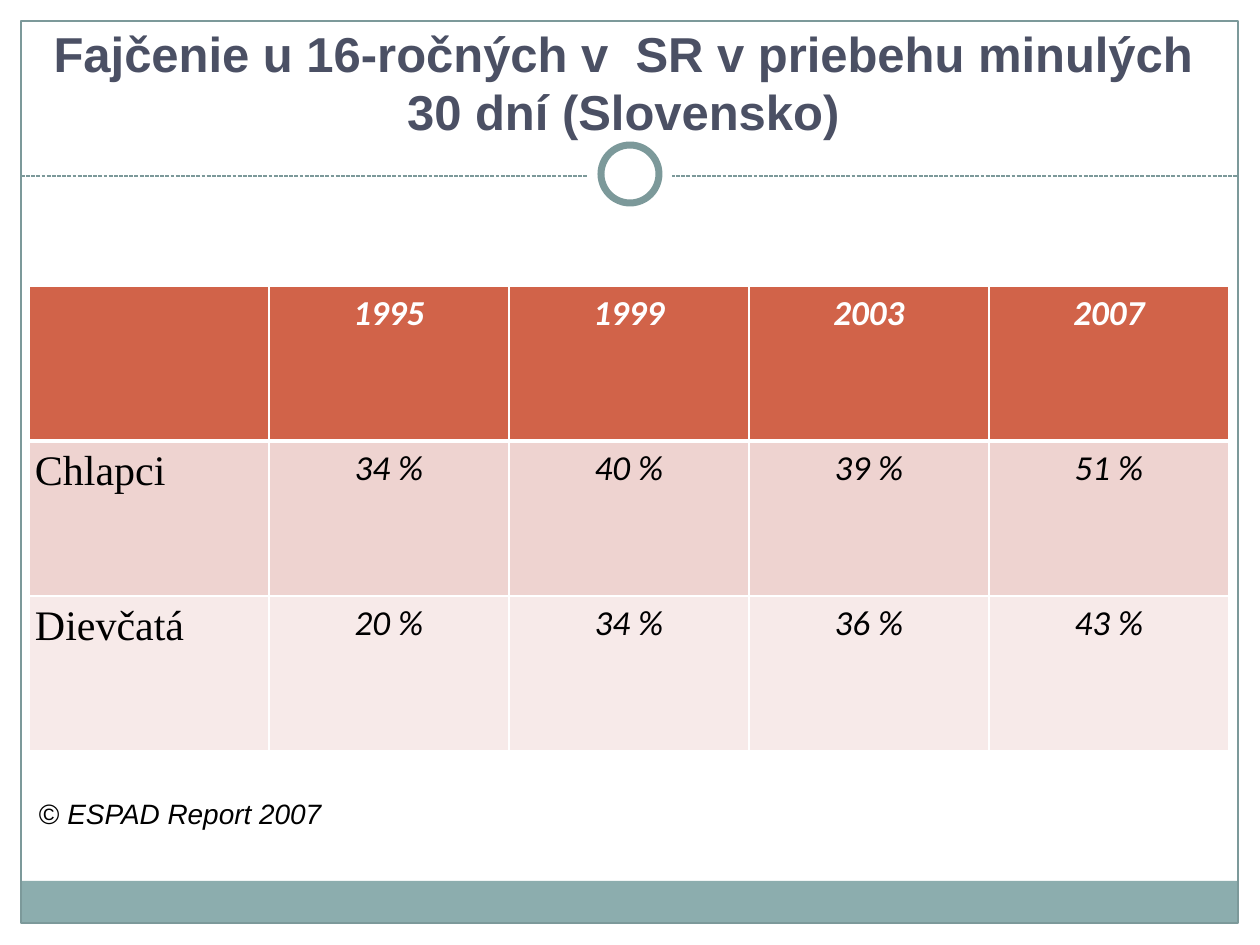
import lxml.etree
import pptx
import pptx.dml.color
import pptx.enum.dml
import pptx.enum.shapes
import pptx.enum.text
import pptx.oxml.ns
import pptx.util

EMU_PER_PX = 914400 // 126
SHAPES = pptx.enum.shapes.MSO_SHAPE
ALIGN = pptx.enum.text.PP_ALIGN
ANCHOR = pptx.enum.text.MSO_ANCHOR
WHITE, BLACK, TEAL, BAND, SLATE = "FFFFFF", "000000", "7C999A", "8CADAE", "4B5064"
ROW_FILLS = ["D16349", "EED3D0", "F7EAE9"]
SMOKING_RATES = [
    ["", "1995", "1999", "2003", "2007"],
    ["Chlapci", "34 %", "40 %", "39 %", "51 %"],
    ["Dievčatá", "20 %", "34 %", "36 %", "43 %"],
]


def px(*lengths):
    """Turn pixel lengths into a list of EMU lengths."""
    return [pptx.util.Emu(length * EMU_PER_PX) for length in lengths]


def color(value):
    """Turn a hex string into a colour."""
    return pptx.dml.color.RGBColor.from_string(value)


def add_shape(slide, kind, box, fill=None, line=None, line_width=0.75):
    """Add a preset shape with an optional fill and outline."""
    shape = slide.shapes.add_shape(kind, *px(*box))
    shape.shadow.inherit = False
    if fill:
        shape.fill.solid()
        shape.fill.fore_color.rgb = color(fill)
    else:
        shape.fill.background()
    if line:
        shape.line.color.rgb = color(line)
        shape.line.width = pptx.util.Pt(line_width)
    else:
        shape.line.fill.background()


def add_dashed_line(slide, start, end):
    """Add a thin dashed connector without a shadow."""
    line = slide.shapes.add_connector(
        pptx.enum.shapes.MSO_CONNECTOR.STRAIGHT, *px(*start, *end))
    line.line.color.rgb = color(TEAL)
    line.line.width = pptx.util.Pt(0.75)
    line.line.dash_style = pptx.enum.dml.MSO_LINE.SQUARE_DOT
    properties = line._element.spPr
    lxml.etree.SubElement(properties, pptx.oxml.ns.qn("a:effectLst"))


def write_text(paragraph, text, size, font="Arial", fill=BLACK, bold=False,
               italic=False, align=ALIGN.LEFT):
    """Add one formatted run to a paragraph."""
    paragraph.alignment = align
    run = paragraph.add_run()
    run.text = text
    run.font.name = font
    run.font.size = pptx.util.Pt(size)
    run.font.bold = bold
    run.font.italic = italic
    run.font.color.rgb = color(fill)


def add_text_box(slide, box, anchor):
    """Add a wrapping text box and return its first paragraph."""
    frame = slide.shapes.add_textbox(*px(*box)).text_frame
    frame.word_wrap = True
    frame.vertical_anchor = anchor
    frame.margin_left = 0
    return frame.paragraphs[0]


def set_border(cell, side, width):
    """Give one side of a cell a white border."""
    border = lxml.etree.SubElement(
        cell._tc.get_or_add_tcPr(), pptx.oxml.ns.qn(f"a:ln{side}"),
        w=str(pptx.util.Pt(width)))
    fill = lxml.etree.SubElement(border, pptx.oxml.ns.qn("a:solidFill"))
    lxml.etree.SubElement(fill, pptx.oxml.ns.qn("a:srgbClr"), val=WHITE)


def format_cell(cell, row, column, text):
    """Write one table cell with its borders, fill and text."""
    widths = {"L": 1, "R": 1, "T": 3 if row == 1 else 1, "B": 3 if row == 0 else 1}
    for side, width in widths.items():
        set_border(cell, side, width)
    cell.fill.solid()
    cell.fill.fore_color.rgb = color(ROW_FILLS[row])
    cell.margin_left, cell.margin_right, cell.margin_top, cell.margin_bottom = px(6, 6, 0, 0)
    if not text:
        return
    paragraph = cell.text_frame.paragraphs[0]
    paragraph.line_spacing = 1.15
    paragraph.space_after = pptx.util.Pt(10)
    if column == 0:
        write_text(paragraph, text, 24, font="Times New Roman", align=ALIGN.JUSTIFY)
    else:
        header = row == 0
        write_text(paragraph, text, 20, font="Calibri", fill=WHITE if header else BLACK,
                   bold=header, italic=True, align=ALIGN.CENTER)


def add_rates_table(slide, box):
    """Add the table of smoking rates with equal rows and columns."""
    table = slide.shapes.add_table(
        len(SMOKING_RATES), len(SMOKING_RATES[0]), *px(*box)).table
    for row, texts in enumerate(SMOKING_RATES):
        for column, text in enumerate(texts):
            format_cell(table.cell(row, column), row, column, text)


def add_frame(slide):
    """Add the slide's border, bottom band, divider and ring."""
    add_shape(slide, SHAPES.RECTANGLE, (21, 881, 1217, 42), fill=BAND)
    add_shape(slide, SHAPES.RECTANGLE, (21, 21, 1217, 902), line=TEAL)
    add_dashed_line(slide, (21, 176), (1238, 176))
    add_shape(slide, SHAPES.OVAL, (588, 132, 84, 84), fill=WHITE)
    add_shape(slide, SHAPES.OVAL, (601, 145, 58, 58), fill=WHITE, line=TEAL, line_width=4)


def main():
    """Build and save the slide."""
    presentation = pptx.Presentation()
    presentation.slide_width, presentation.slide_height = px(1260, 945)
    slide = presentation.slides.add_slide(presentation.slide_layouts[6])
    add_frame(slide)
    title = add_text_box(slide, (29, 21, 1201, 126), ANCHOR.BOTTOM)
    write_text(title, "Fajčenie u 16-ročných v  SR v priebehu minulých 30 dní (Slovensko)",
               28, fill=SLATE, bold=True, align=ALIGN.CENTER)
    add_rates_table(slide, (29, 286, 1200, 465))
    source = add_text_box(slide, (39, 790, 1191, 67), ANCHOR.TOP)
    source.space_before = pptx.util.Pt(2)
    write_text(source, "© ", 16)
    write_text(source, "ESPAD Report 2007", 16, italic=True)
    presentation.save("out.pptx")


if __name__ == "__main__":
    main()
